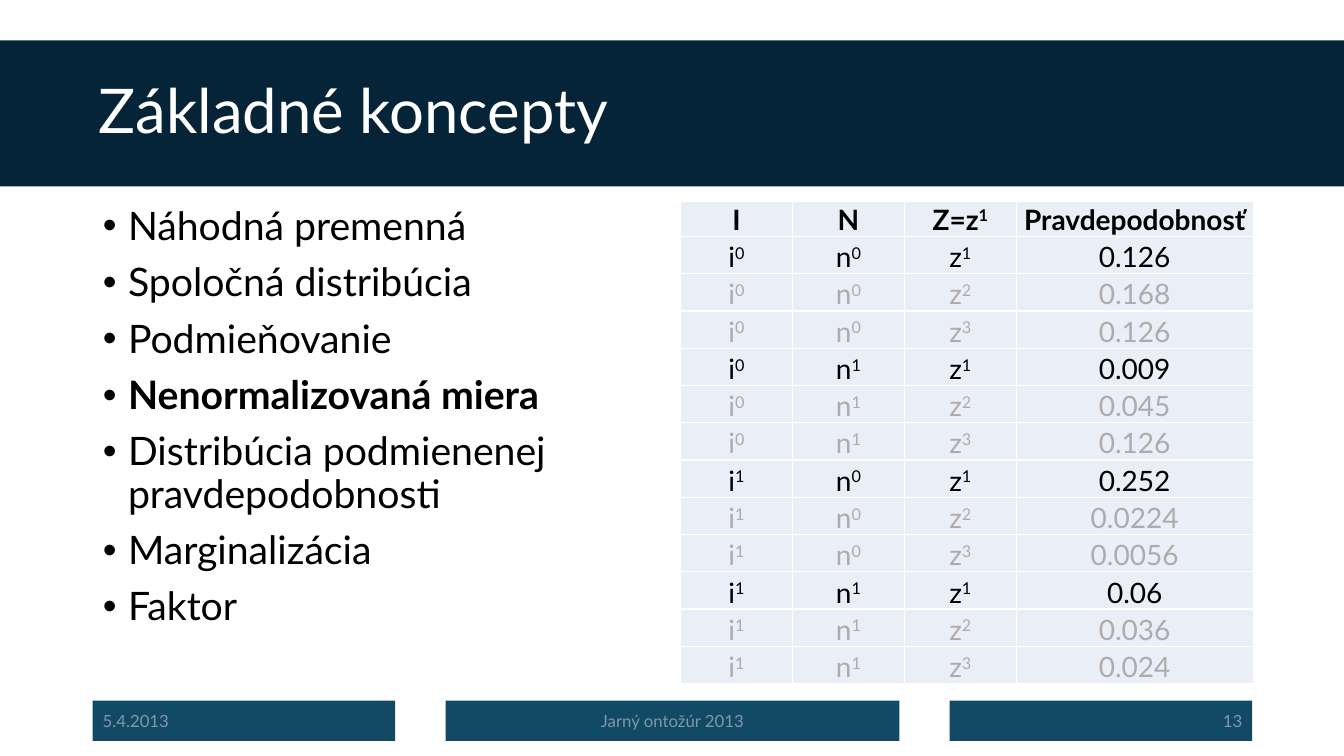
from itertools import product

from lxml.etree import SubElement
from pptx import Presentation
from pptx.dml.color import RGBColor
from pptx.enum.shapes import MSO_SHAPE
from pptx.enum.text import MSO_ANCHOR, MSO_AUTO_SIZE, PP_ALIGN
from pptx.oxml.ns import qn
from pptx.util import Inches, Pt

TITLE = "Základné koncepty"
TOPICS = [
    "Náhodná premenná",
    "Spoločná distribúcia",
    "Podmieňovanie",
    "Nenormalizovaná miera",
    "Distribúcia podmienenej pravdepodobnosti",
    "Marginalizácia",
    "Faktor",
]
CURRENT = "Nenormalizovaná miera"
# Each cell is a base text and its superscript.
HEADER = [("I", ""), ("N", ""), ("Z=z", "1"), ("Pravdepodobnosť", "")]
VALUES = ["0.126", "0.168", "0.126", "0.009", "0.045", "0.126",
          "0.252", "0.0224", "0.0056", "0.06", "0.036", "0.024"]
FOOTER = [
    ("5.4.2013", 0.92, 3, PP_ALIGN.LEFT),
    ("Jarný ontožúr 2013", 4.42, 4.5, PP_ALIGN.CENTER),
    ("13", 9.42, 3, PP_ALIGN.RIGHT),
]
WIDTHS = [1.11, 1.11, 1.11, 2.35]
HEAD_H, ROW_H = 0.32, 0.37

FONT = "Lato"
NAVY, TEAL, MIST = "052438", "124965", "EAEFF7"
WHITE, BLACK, GREY, PALE = "FFFFFF", "000000", "AFABAB", "8298A6"


def rgb(code):
    return RGBColor.from_string(code)


def assign(target, values):
    for name, value in values.items():
        setattr(target, name, value)


def paint(item, code):
    item.fill.solid()
    item.fill.fore_color.rgb = rgb(code)


def place(shape, left, top, width, height):
    assign(shape, {"left": Inches(left), "top": Inches(top),
                   "width": Inches(width), "height": Inches(height)})


def write(para, text, size, color, bold=False, raised=False):
    run = para.add_run()
    run.text = text
    assign(run.font, {"name": FONT, "size": Pt(size), "bold": bold})
    run.font.color.rgb = rgb(color)
    if raised:
        run.font._element.set("baseline", "30000")


def bullet(para):
    props = para._p.get_or_add_pPr()
    props.set("marL", str(Inches(0.25)))
    props.set("indent", str(-Inches(0.25)))
    SubElement(props, qn("a:buFont"), typeface="Arial")
    SubElement(props, qn("a:buChar"), char="•")


def border(cell):
    props = cell._tc.get_or_add_tcPr()
    for side in "LRTB":
        line = SubElement(props, qn(f"a:ln{side}"), w=str(Pt(1)))
        fill = SubElement(line, qn("a:solidFill"))
        SubElement(fill, qn("a:srgbClr"), val=WHITE)


def add_title(slide):
    title = slide.shapes.title
    place(title, 0, 0.4, 13.33, 1.45)
    paint(title, NAVY)
    frame = title.text_frame
    assign(frame, {"auto_size": MSO_AUTO_SIZE.NONE,
                   "vertical_anchor": MSO_ANCHOR.MIDDLE,
                   "margin_left": Inches(0.98)})
    para = frame.paragraphs[0]
    assign(para, {"alignment": PP_ALIGN.LEFT, "line_spacing": 0.9})
    write(para, TITLE, 44, WHITE)


def add_topics(slide):
    body = slide.placeholders[1]
    place(body, 0.92, 2, 5.67, 4.76)
    paint(body, WHITE)
    tint = body._element.spPr.find(".//" + qn("a:srgbClr"))
    SubElement(tint, qn("a:alpha"), val="80000")
    frame = body.text_frame
    frame.auto_size = MSO_AUTO_SIZE.NONE
    for n, topic in enumerate(TOPICS):
        para = frame.add_paragraph() if n else frame.paragraphs[0]
        bullet(para)
        assign(para, {"line_spacing": 0.9, "space_before": Pt(10 if n else 0)})
        write(para, topic, 28, BLACK, bold=topic == CURRENT)


def add_grid(slide):
    states = product("01", "01", "123")
    rows = [HEADER] + [
        [("i", i), ("n", n), ("z", z), (value, "")]
        for (i, n, z), value in zip(states, VALUES)
    ]
    high = HEAD_H + ROW_H * len(VALUES)
    table = slide.shapes.add_table(
        len(rows), len(WIDTHS), Inches(6.75), Inches(2),
        Inches(sum(WIDTHS)), Inches(high)).table
    assign(table, {"first_row": False, "horz_banding": False})
    for column, width in zip(table.columns, WIDTHS):
        column.width = Inches(width)
    for r, row in enumerate(rows):
        head = r == 0
        table.rows[r].height = Inches(HEAD_H if head else ROW_H)
        # Only the rows that agree with the evidence z1 stay black.
        color = BLACK if head or row[2] == ("z", "1") else GREY
        for c, (text, power) in enumerate(row):
            cell = table.cell(r, c)
            border(cell)
            paint(cell, MIST)
            assign(cell, {"vertical_anchor": MSO_ANCHOR.BOTTOM,
                          "margin_left": Inches(0.01),
                          "margin_right": Inches(0.01),
                          "margin_top": Inches(0.01),
                          "margin_bottom": 0})
            para = cell.text_frame.paragraphs[0]
            para.alignment = PP_ALIGN.CENTER
            write(para, text, 20, color, head)
            if power:
                write(para, power, 20, color, head, raised=True)


def add_footer(slide):
    for text, left, width, align in FOOTER:
        bar = slide.shapes.add_shape(
            MSO_SHAPE.RECTANGLE, Inches(left), Inches(6.95),
            Inches(width), Inches(0.4))
        bar.shadow.inherit = False
        bar.line.fill.background()
        paint(bar, TEAL)
        bar.text_frame.vertical_anchor = MSO_ANCHOR.MIDDLE
        para = bar.text_frame.paragraphs[0]
        para.alignment = align
        write(para, text, 12, PALE)


def main():
    deck = Presentation()
    assign(deck, {"slide_width": Inches(13.33), "slide_height": Inches(7.5)})
    slide = deck.slides.add_slide(deck.slide_layouts[1])
    add_title(slide)
    add_topics(slide)
    add_grid(slide)
    add_footer(slide)
    deck.save("out.pptx")


if __name__ == "__main__":
    main()
